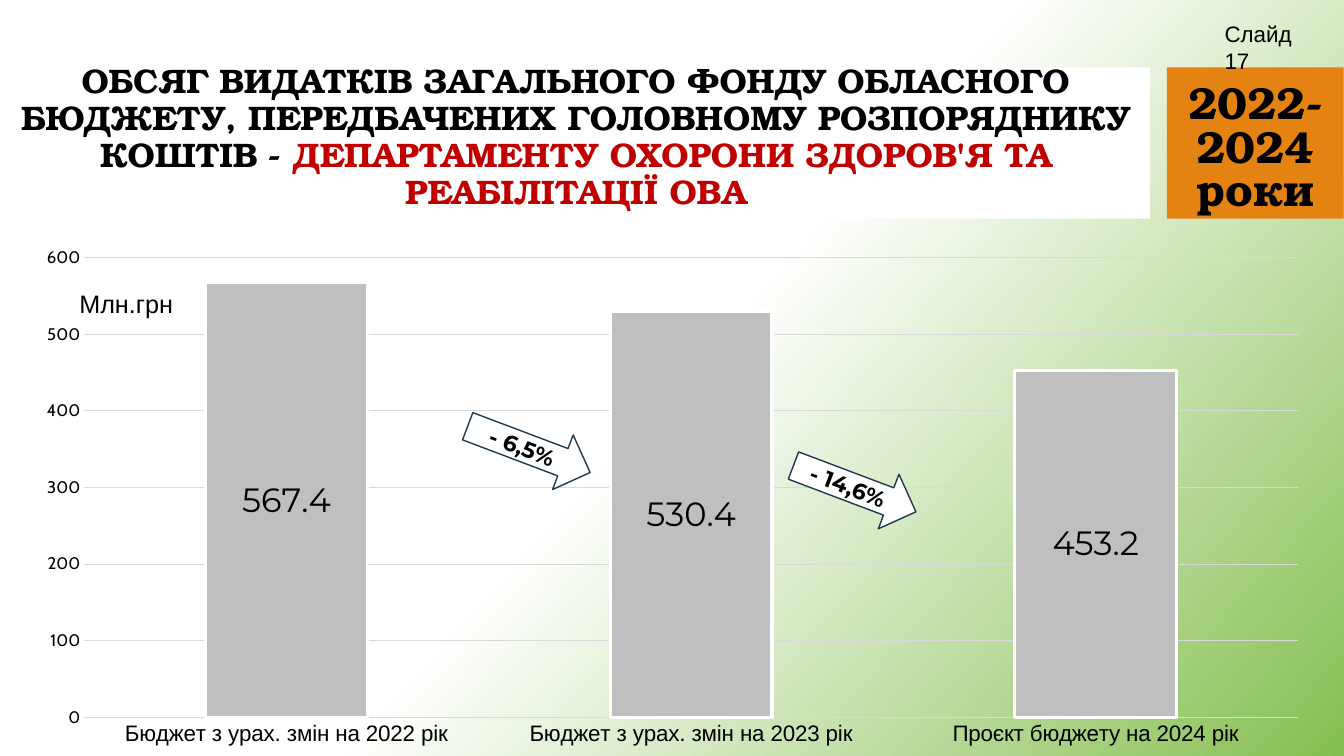
from dataclasses import dataclass
from lxml import etree
from pptx import Presentation
from pptx.chart.data import CategoryChartData
from pptx.dml.color import RGBColor
from pptx.enum.chart import XL_CHART_TYPE, XL_LABEL_POSITION, XL_TICK_MARK
from pptx.enum.shapes import MSO_SHAPE
from pptx.enum.text import MSO_ANCHOR, MSO_AUTO_SIZE, PP_ALIGN
from pptx.oxml import parse_xml
from pptx.oxml.ns import nsdecls, qn
from pptx.util import Cm, Pt

TITLE = [
    ("ОБСЯГ ВИДАТКІВ ЗАГАЛЬНОГО ФОНДУ ОБЛАСНОГО БЮДЖЕТУ, ПЕРЕДБАЧЕНИХ "
     "ГОЛОВНОМУ РОЗПОРЯДНИКУ КОШТІВ - ", "black"),
    ("ДЕПАРТАМЕНТУ ОХОРОНИ ЗДОРОВ'Я ТА РЕАБІЛІТАЦІЇ ОВА", "red"),
]
PERIOD = ["2022-", "2024", "роки"]
BUDGETS = [
    ("Бюджет з урах. змін на 2022 рік", 567.4),
    ("Бюджет з урах. змін на 2023 рік", 530.4),
    ("Проєкт бюджету на 2024 рік", 453.2),
]
CHANGES = [("- 6,5%", 11.68, 10.59), ("- 14,6%", 19.89, 11.58)]
UNIT = "Млн.грн"
PAGE = "Слайд 17"


@dataclass(frozen=True)
class Theme:
    black: str = "000000"
    white: str = "FFFFFF"
    red: str = "C00000"
    orange: str = "E48312"
    green: str = "86BF51"
    bar: str = "BFBFBF"
    grid: str = "D9D9D9"
    navy: str = "203A4E"
    heading: str = "TeX Gyre Bonum"
    plain: str = "Arial"
    numbers: str = "Montserrat"
    scale: str = "Cabin"
    title_size: float = 24.3
    period_size: int = 32
    value_size: int = 24
    unit_size: int = 18
    label_size: int = 16
    scale_size: int = 12


THEME = Theme()


def rgb(color):
    return RGBColor.from_string(color)


def style(font, name, size, color=THEME.black, bold=False):
    font.name, font.size, font.bold = name, Pt(size), bold
    font.color.rgb = rgb(color)


def outline(run, points):
    edge = parse_xml(f'<a:ln {nsdecls("a")} w="{int(points * 12700)}"><a:solidFill>'
                     f'<a:srgbClr val="{THEME.white}"/></a:solidFill></a:ln>')
    run.font._element.insert(0, edge)


def block(slide, kind, box, fill):
    shape = slide.shapes.add_shape(kind, *map(Cm, box))
    shape.shadow.inherit = False
    shape.fill.solid()
    shape.fill.fore_color.rgb = rgb(fill)
    shape.line.fill.background()
    return shape


def caption(slide, text, box, size):
    label = slide.shapes.add_textbox(*map(Cm, box))
    label.text_frame.word_wrap = True
    label.text_frame.text = text
    style(label.text_frame.paragraphs[0].runs[0].font, THEME.plain, size)


def add_heading(slide):
    block(slide, MSO_SHAPE.RECTANGLE, (0, 1.7, 28.98, 3.81), THEME.white)
    block(slide, MSO_SHAPE.RECTANGLE, (29.41, 1.7, 4.45, 3.81), THEME.orange)
    title = slide.shapes.title
    slide.shapes._spTree.append(title._element)
    title.left, title.top, title.width, title.height = map(Cm, (0, 2.69, 29.03, 3))
    frame = title.text_frame
    frame.word_wrap = True
    frame.auto_size = MSO_AUTO_SIZE.NONE
    frame.vertical_anchor = MSO_ANCHOR.MIDDLE
    frame.margin_bottom = Cm(1.55)
    sentence = frame.paragraphs[0]
    sentence.alignment, sentence.line_spacing = PP_ALIGN.CENTER, 0.9
    for words, color in TITLE:
        run = sentence.add_run()
        run.text = words
        style(run.font, THEME.heading, THEME.title_size, getattr(THEME, color), True)
        outline(run, 0.25)


def add_chart(slide):
    data = CategoryChartData(number_format="0.0")
    data.categories = [name for name, _ in BUDGETS]
    data.add_series("Series 1", [amount for _, amount in BUDGETS])
    chart = slide.shapes.add_chart(
        XL_CHART_TYPE.COLUMN_STACKED, *map(Cm, (0.48, 5.97, 32.89, 13.08)), data).chart
    chart.has_legend = chart.has_title = False
    style(chart.font, THEME.scale, 10)

    years, amounts = chart.category_axis, chart.value_axis
    for axis in (years, amounts):
        axis.major_tick_mark = axis.minor_tick_mark = XL_TICK_MARK.NONE
        axis.format.line.fill.background()
    style(years.tick_labels.font, THEME.plain, THEME.label_size)
    style(amounts.tick_labels.font, THEME.scale, THEME.scale_size)
    amounts.tick_labels.number_format = "0"
    amounts.tick_labels.number_format_is_linked = False
    amounts.minimum_scale, amounts.maximum_scale, amounts.major_unit = 0, 600, 100
    amounts.major_gridlines.format.line.color.rgb = rgb(THEME.grid)
    amounts.major_gridlines.format.line.width = Pt(0.75)

    plot = chart.plots[0]
    plot.gap_width, plot.overlap, plot.vary_by_categories = 150, 100, False
    bars = plot.series[0].format
    bars.fill.solid()
    bars.fill.fore_color.rgb = rgb(THEME.bar)
    bars.line.color.rgb = rgb(THEME.white)
    bars.line.width = Pt(2.25)
    plot.has_data_labels = True
    values = plot.data_labels
    values.show_value = True
    values.position = XL_LABEL_POSITION.CENTER
    style(values.font, THEME.numbers, THEME.value_size)

    area = chart._chartSpace.find(".//" + qn("c:plotArea"))
    for old in area.findall(qn("c:layout")):
        area.remove(old)
    layout = parse_xml(f'<c:layout {nsdecls("c")}><c:manualLayout/></c:layout>')
    settings = [("layoutTarget", "inner"), ("xMode", "edge"), ("yMode", "edge"),
                ("x", "0.05"), ("y", "0.04"), ("w", "0.93"), ("h", "0.886")]
    for tag, setting in settings:
        etree.SubElement(layout[0], qn(f"c:{tag}")).set("val", setting)
    area.insert(0, layout)


def add_period(slide):
    frame = slide.shapes.add_textbox(*map(Cm, (29.67, 1.75, 3.94, 3.81))).text_frame
    frame.word_wrap = True
    frame.vertical_anchor = MSO_ANCHOR.MIDDLE
    frame.text = "\n".join(PERIOD)
    for index, line in enumerate(frame.paragraphs):
        line.alignment = PP_ALIGN.CENTER
        if index:
            line.line_spacing = 0.8
        style(line.runs[0].font, THEME.heading, THEME.period_size, bold=True)
        outline(line.runs[0], 0.75)


def add_changes(slide):
    for percent, left, top in CHANGES:
        arrow = block(slide, MSO_SHAPE.RIGHT_ARROW, (left, top, 3.3, 1.47), THEME.white)
        arrow.rotation = 20.7
        arrow.line.color.rgb = rgb(THEME.navy)
        arrow.line.width = Pt(1)
        frame = arrow.text_frame
        frame.word_wrap = False
        frame.vertical_anchor = MSO_ANCHOR.MIDDLE
        frame.text = percent
        frame.paragraphs[0].alignment = PP_ALIGN.CENTER
        style(frame.paragraphs[0].runs[0].font, THEME.numbers, THEME.label_size, bold=True)


def main():
    deck = Presentation()
    deck.slide_width, deck.slide_height = Cm(33.87), Cm(19.05)
    slide = deck.slides.add_slide(deck.slide_layouts[5])
    backdrop = slide.background.fill
    backdrop.gradient()
    backdrop.gradient_angle = 318
    for stop, position, color in zip(backdrop.gradient_stops, (0.5, 1),
                                     (THEME.white, THEME.green)):
        stop.position = position
        stop.color.rgb = rgb(color)
    add_heading(slide)
    add_chart(slide)
    add_period(slide)
    caption(slide, UNIT, (1.75, 7.14, 3.07, 1.02), THEME.unit_size)
    add_changes(slide)
    caption(slide, PAGE, (30.61, 0.38, 2.77, 0.94), THEME.label_size)
    deck.save("out.pptx")


if __name__ == "__main__":
    main()
